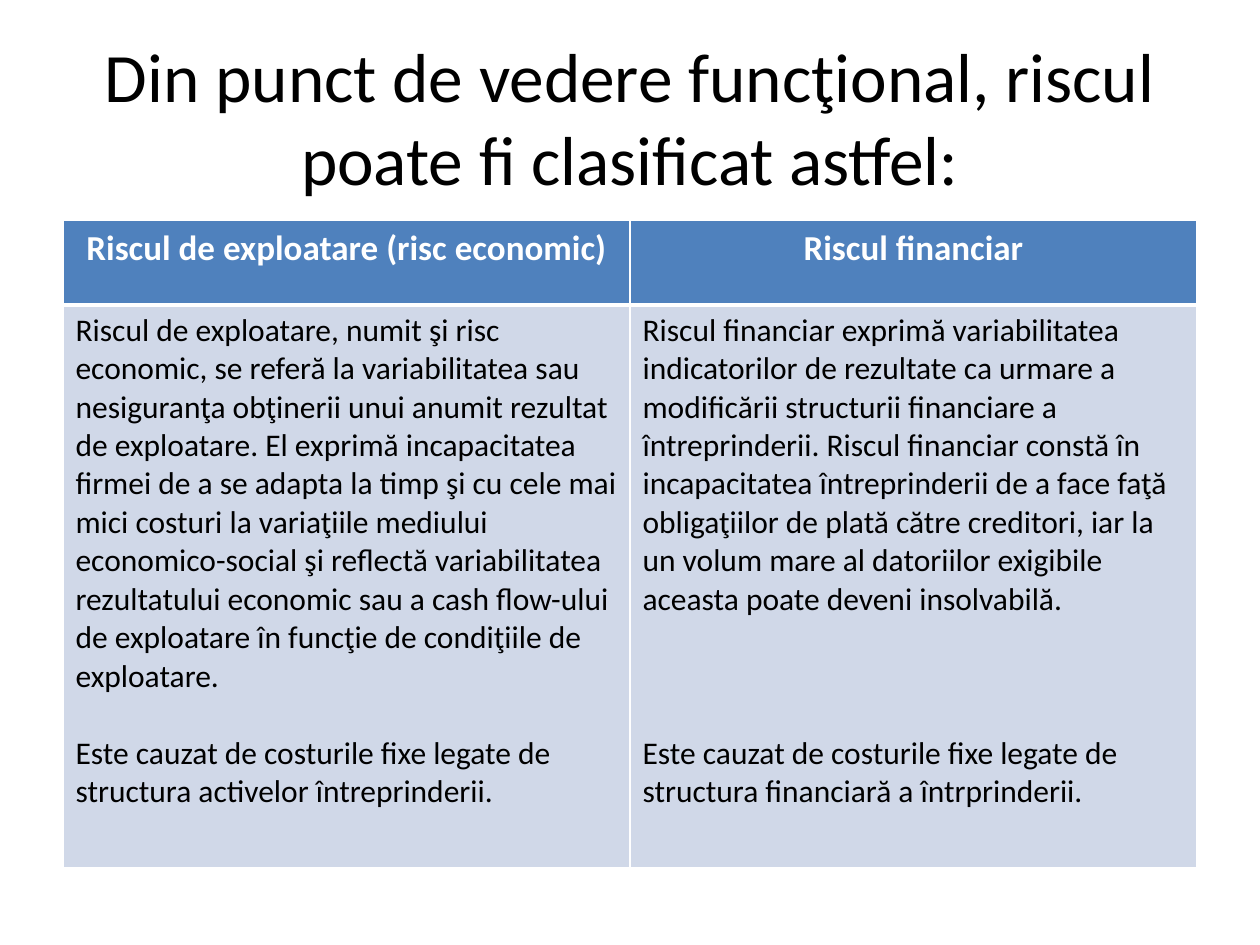
from lxml import etree
from pptx import Presentation, util as u
from pptx.dml.color import RGBColor
from pptx.enum import text
from pptx.oxml.ns import qn

BLACK = RGBColor(0x00, 0x00, 0x00)
WHITE = RGBColor(0xFF, 0xFF, 0xFF)
HEADER_BLUE = RGBColor(0x4F, 0x81, 0xBD)
BODY_BLUE = RGBColor(0xD0, 0xD8, 0xE8)

TITLE = "Din punct de vedere funcţional, riscul poate fi clasificat astfel:"
# Each column: heading, definition, cause, space before the cause in points
RISKS = [
    (
        "Riscul de exploatare (risc economic)",
        "Riscul de exploatare, numit şi risc economic, se referă la "
        "variabilitatea sau nesiguranţa obţinerii unui anumit rezultat de "
        "exploatare. El exprimă incapacitatea firmei de a se adapta la timp "
        "şi cu cele mai mici costuri la variaţiile mediului economico-social "
        "şi reflectă variabilitatea rezultatului economic sau a cash "
        "flow-ului de exploatare în funcţie de condiţiile de exploatare.",
        "Este cauzat de costurile fixe legate de structura activelor "
        "întreprinderii.",
        22,
    ),
    (
        "Riscul financiar",
        "Riscul financiar exprimă variabilitatea indicatorilor de rezultate "
        "ca urmare a modificării structurii financiare a întreprinderii. "
        "Riscul financiar constă în incapacitatea întreprinderii de a face "
        "faţă obligaţiilor de plată către creditori, iar la un volum mare al "
        "datoriilor exigibile aceasta poate deveni insolvabilă.",
        "Este cauzat de costurile fixe legate de structura financiară a "
        "întrprinderii.",
        66,
    ),
]


class SlideBuilder:
    font_name = "Calibri"

    def __init__(self, deck):
        self.slide = deck.slides.add_slide(deck.slide_layouts[5])

    def style(self, para, size, color, bold=False, align=text.PP_ALIGN.LEFT):
        para.alignment = align
        para.font.name = self.font_name
        para.font.size = u.Pt(size)
        para.font.bold = bold
        para.font.color.rgb = color

    def title(self, wording):
        box = self.slide.shapes.title
        box.left, box.top = u.Inches(0.5), u.Inches(0.3)
        box.width, box.height = u.Inches(9), u.Inches(1.25)
        frame = box.text_frame
        frame.text = wording
        frame.word_wrap = True
        frame.auto_size = text.MSO_AUTO_SIZE.NONE
        frame.vertical_anchor = text.MSO_ANCHOR.MIDDLE
        self.style(frame.paragraphs[0], 39.6, BLACK, align=text.PP_ALIGN.CENTER)

    def finish_cell(self, cell, fill, top, bottom):
        """Draw white borders, in points, and then fill the cell."""
        properties = cell._tc.get_or_add_tcPr()
        for side, width in (("L", 1), ("R", 1), ("T", top), ("B", bottom)):
            line = etree.SubElement(properties, qn(f"a:ln{side}"), w=str(u.Pt(width)))
            solid = etree.SubElement(line, qn("a:solidFill"))
            etree.SubElement(solid, qn("a:srgbClr"), val=str(WHITE))
        cell.fill.solid()
        cell.fill.fore_color.rgb = fill

    def risk_table(self, risks):
        heights = [u.Inches(0.67), u.Inches(4.47)]
        table = self.slide.shapes.add_table(
            len(heights), len(risks),
            u.Inches(0.5), u.Inches(1.75), u.Inches(9), sum(heights),
        ).table
        for row, height in zip(table.rows, heights):
            row.height = height
        for column, (heading, definition, cause, gap) in enumerate(risks):
            header, body = table.cell(0, column), table.cell(1, column)
            header.text = heading
            self.style(header.text_frame.paragraphs[0], 20, WHITE, True,
                       text.PP_ALIGN.CENTER)
            self.finish_cell(header, HEADER_BLUE, top=1, bottom=3)

            body.text = f"{definition}\n{cause}"
            for para in body.text_frame.paragraphs:
                self.style(para, 18, BLACK)
            body.text_frame.paragraphs[1].space_before = u.Pt(gap)
            self.finish_cell(body, BODY_BLUE, top=3, bottom=1)


def main():
    deck = Presentation()
    deck.slide_width, deck.slide_height = u.Inches(10), u.Inches(7.5)
    page = SlideBuilder(deck)
    page.title(TITLE)
    page.risk_table(RISKS)
    deck.save("out.pptx")


if __name__ == "__main__":
    main()
